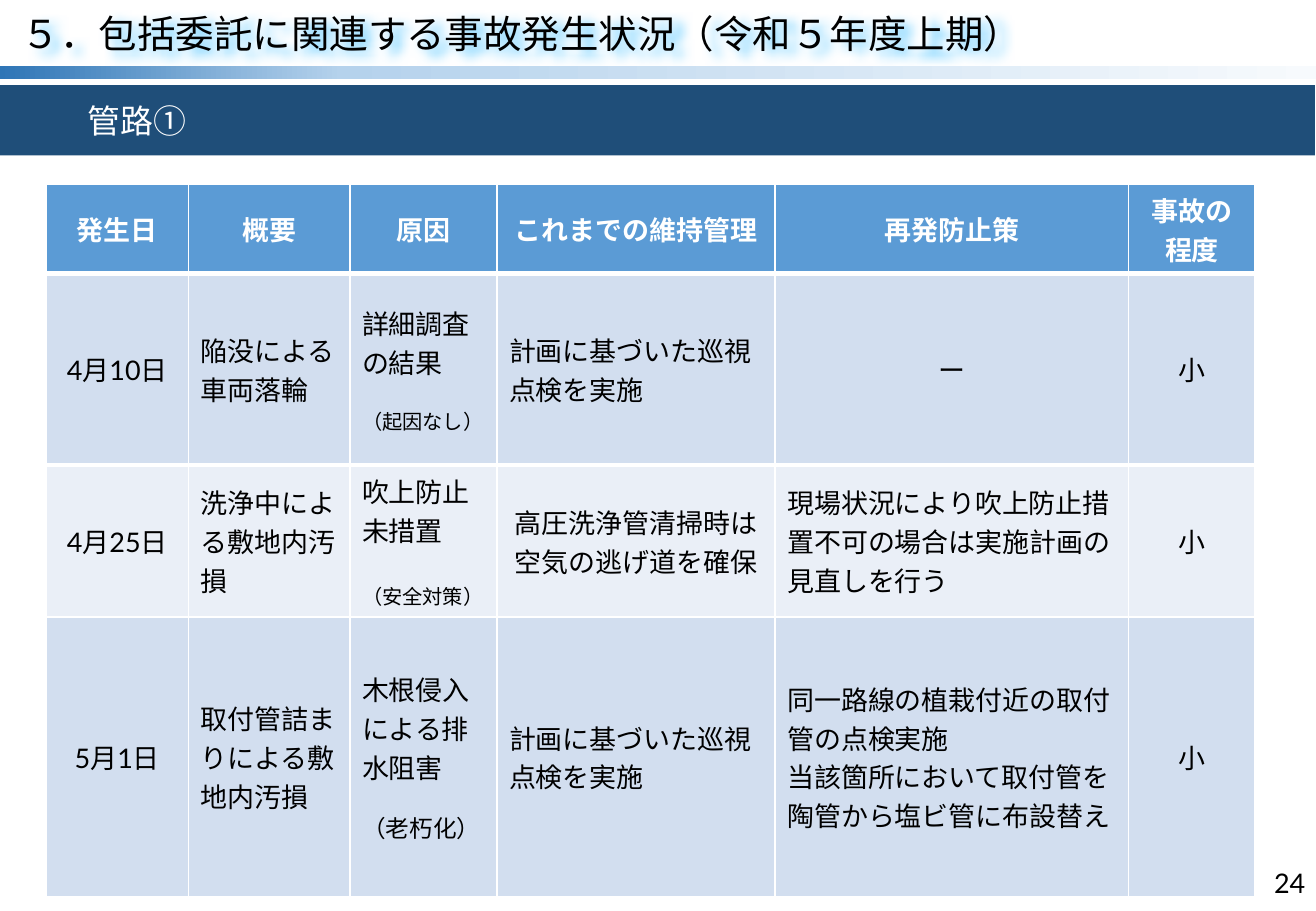
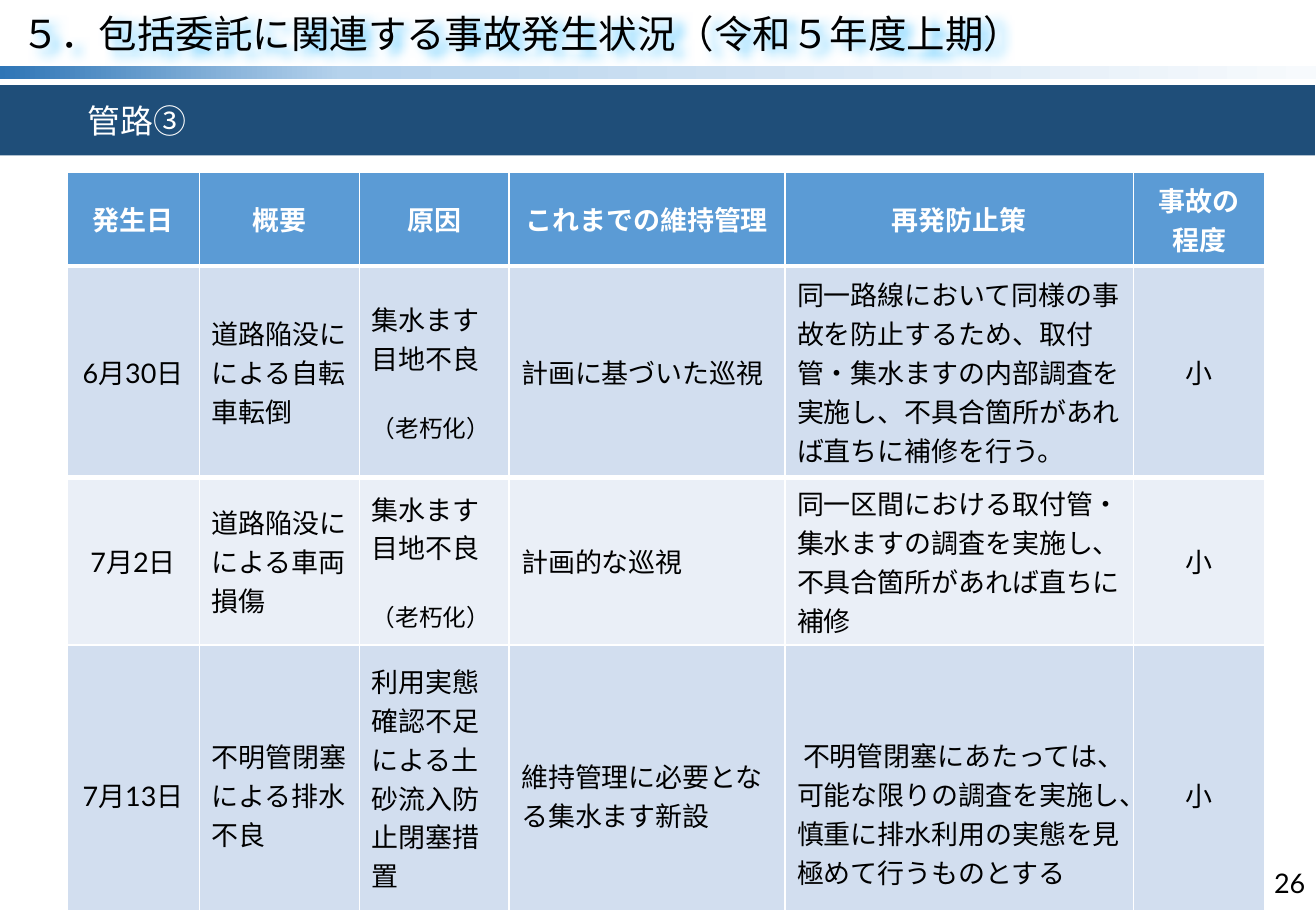
from copy import deepcopy
from dataclasses import dataclass

from lxml.etree import SubElement
from pptx import Presentation
from pptx.dml.color import RGBColor
from pptx.enum.shapes import MSO_SHAPE as Shape
from pptx.enum.text import MSO_ANCHOR as Anchor, MSO_AUTO_SIZE as Fit, PP_ALIGN as Align
from pptx.oxml.ns import qn
from pptx.util import Inches, Pt

WHITE = RGBColor(0xFF, 0xFF, 0xFF)
BLACK = RGBColor(0, 0, 0)
NAVY = RGBColor(0x1F, 0x4E, 0x79)
HEAD = RGBColor(0x5B, 0x9B, 0xD5)
DARK = RGBColor(0xD2, 0xDE, 0xEF)
PALE = RGBColor(0xEA, 0xEF, 0xF7)
GLOW = RGBColor(0x66, 0xCC, 0xFF)
FADE = [(0, RGBColor(0x2E, 0x75, 0xB6)), (0.26, RGBColor(0xB5, 0xD2, 0xEC)),
        (1, RGBColor(0xF7, 0xFA, 0xFD))]

LATIN = "Lato"
KANJI = "Noto Sans CJK JP"
TITLE = "５．包括委託に関連する事故発生状況（令和５年度上期）"
HEADS = ("発生日", "概要", "原因", "これまでの維持管理", "再発防止策", "事故の程度")


@dataclass
class Text:
    text: str
    size: float = 16
    gap: float = 0
    mid: bool = False


@dataclass
class Cell:
    paras: list[Text]
    top: float = 0.05


@dataclass
class Row:
    high: float
    date: str
    event: str
    cause: Cell
    care: Cell
    plan: Cell
    top: float = 0.05


@dataclass
class Page:
    number: str
    topic: str
    left: float
    top: float
    cols: list[float]
    head: float
    rows: list[Row]


def plain(*lines: str, mid: bool = False, top: float = 0.05) -> Cell:
    return Cell([Text(line, mid=mid) for line in lines], top)


def noted(text: str, note: str, size: float, gap: float) -> Cell:
    return Cell([Text(text), Text(note, size, gap)])


PAGES = [
    Page("24", "管路①", 0.38, 1.52, [1.17, 1.33, 1.21, 2.29, 2.91, 1.04], 0.73, [
        Row(1.58, "4月10日", "陥没による車両落輪",
            noted("詳細調査の結果", "（起因なし）", 12, 14.4),
            plain("計画に基づいた巡視点検を実施"), plain("ー", mid=True)),
        Row(1.25, "4月25日", "洗浄中による敷地内汚損",
            noted("吹上防止未措置", "（安全対策）", 12, 19.2),
            plain("高圧洗浄管清掃時は空気の逃げ道を確保", mid=True),
            plain("現場状況により吹上防止措置不可の場合は実施計画の見直しを行う")),
        Row(2.3, "5月1日", "取付管詰まりによる敷地内汚損",
            noted("木根侵入による排水阻害", "（老朽化）", 14, 14.4),
            plain("計画に基づいた巡視点検を実施"),
            plain("同一路線の植栽付近の取付管の点検実施",
                  "当該箇所において取付管を陶管から塩ビ管に布設替え")),
    ]),
    Page("26", "管路③", 0.55, 1.42, [1.09, 1.32, 1.23, 2.27, 2.87, 1.08], 0.77, [
        Row(1.74, "6月30日", "道路陥没にによる自転車転倒",
            noted("集水ます目地不良", "（老朽化）", 14, 19.2),
            plain("計画に基づいた巡視"),
            plain("同一路線において同様の事故を防止するため、取付管・集水ますの内部調査を"
                  "実施し、不具合箇所があれば直ちに補修を行う。")),
        Row(1.38, "7月2日", "道路陥没にによる車両損傷",
            noted("集水ます目地不良", "（老朽化）", 14, 19.2),
            plain("計画的な巡視"),
            plain("同一区間における取付管・集水ますの調査を実施し、不具合箇所があれば"
                  "直ちに補修")),
        Row(2.19, "7月13日", "不明管閉塞による排水不良",
            plain("利用実態確認不足による土砂流入防止閉塞措置"),
            plain("維持管理に必要となる集水ます新設", top=0.33),
            plain(" 不明管閉塞にあたっては、可能な限りの調査を実施し、慎重に排水利用の"
                  "実態を見極めて行うものとする", top=0.63), top=0.33),
    ]),
]


def style(para, size: float, color: RGBColor, name: str = LATIN,
          align=Align.LEFT, bold: bool = False) -> None:
    para.alignment = align
    font = para.font
    font.size, font.name, font.bold = Pt(size), name, bold
    font.color.rgb = color
    if name == KANJI:
        props = para._p.pPr.find(qn("a:defRPr"))
        SubElement(props, qn("a:ea")).set("typeface", KANJI)


def inset(frame, left: float, top: float, right: float, low: float) -> None:
    frame.margin_left, frame.margin_top = Inches(left), Inches(top)
    frame.margin_right, frame.margin_bottom = Inches(right), Inches(low)


def place(shape, left: float, top: float, wide: float, high: float) -> None:
    shape.left, shape.top = Inches(left), Inches(top)
    shape.width, shape.height = Inches(wide), Inches(high)


def band(slide, top: float, wide: float, high: float):
    shape = slide.shapes.add_shape(Shape.RECTANGLE, 0, Inches(top), Inches(wide), Inches(high))
    shape.shadow.inherit = False
    shape.line.fill.background()
    return shape


def add_title(slide) -> None:
    title = slide.shapes.title
    place(title, 0.15, 0.13, 10.53, 0.37)
    frame = title.text_frame
    frame.text = TITLE
    frame.auto_size, frame.word_wrap = Fit.NONE, True
    frame.vertical_anchor = Anchor.TOP
    inset(frame, 0.03, 0.03, 0.03, 0.03)
    para = frame.paragraphs[0]
    style(para, 22.8, BLACK, KANJI)
    para.line_spacing = Pt(21.9)
    # Soft blue shadow behind the letters
    effect = SubElement(title.element.spPr, qn("a:effectLst"))
    shadow = SubElement(effect, qn("a:outerShdw"), blurRad=str(Pt(6)),
                        dist=str(Pt(5)), dir="1800000", algn="tl", rotWithShape="0")
    SubElement(shadow, qn("a:srgbClr"), val=str(GLOW))


def add_frame(slide, page: Page) -> None:
    add_title(slide)
    # Fading rule under the title
    rule = band(slide, 0.54, 10.83, 0.11)
    rule.fill.gradient()
    rule.fill.gradient_angle = 0
    stops = rule.element.spPr.find(".//" + qn("a:gsLst"))
    stops.append(deepcopy(stops[0]))
    for stop, (spot, color) in zip(rule.fill.gradient_stops, FADE):
        stop.position, stop.color.rgb = spot, color
    # Topic band
    topic = band(slide, 0.7, 10.82, 0.58)
    topic.fill.solid()
    topic.fill.fore_color.rgb = NAVY
    frame = topic.text_frame
    frame.text = page.topic
    frame.vertical_anchor = Anchor.MIDDLE
    inset(frame, 0.72, 0.1, 0.09, 0.1)
    style(frame.paragraphs[0], 19.5, WHITE, KANJI)
    # Page number
    box = slide.shapes.add_textbox(Inches(8.4), Inches(7.07), Inches(2.44), Inches(0.4))
    frame = box.text_frame
    frame.text = page.number
    frame.word_wrap, frame.vertical_anchor = True, Anchor.MIDDLE
    style(frame.paragraphs[0], 16, BLACK, align=Align.RIGHT)


def add_edge(cell, side: str, width: float) -> None:
    props = cell._tc.get_or_add_tcPr()
    edge = SubElement(props, qn(side), w=str(Pt(width)))
    SubElement(SubElement(edge, qn("a:solidFill")), qn("a:srgbClr"), val=str(WHITE))
    props.insert(0, edge)


def fill_cell(cell, data: Cell, back: RGBColor, color: RGBColor, bold: bool) -> None:
    cell.fill.solid()
    cell.fill.fore_color.rgb = back
    cell.vertical_anchor = Anchor.MIDDLE
    cell.margin_top = Inches(data.top)
    frame = cell.text_frame
    for i, item in enumerate(data.paras):
        para = frame.add_paragraph() if i else frame.paragraphs[0]
        para.text = item.text
        align = Align.CENTER if item.mid else Align.LEFT
        style(para, item.size, color, align=align, bold=bold)
        if item.gap:
            para.space_before = Pt(item.gap)


def add_grid(slide, page: Page) -> None:
    highs = [page.head] + [row.high for row in page.rows]
    table = slide.shapes.add_table(
        len(highs), len(HEADS), Inches(page.left), Inches(page.top),
        Inches(sum(page.cols)), Inches(sum(highs))).table
    for col, wide in zip(table.columns, page.cols):
        col.width = Inches(wide)
    for line, high in zip(table.rows, highs):
        line.height = Inches(high)
    # Header row with a thick lower edge
    for c, head in enumerate(HEADS):
        fill_cell(table.cell(0, c), plain(head, mid=True), HEAD, WHITE, True)
        add_edge(table.cell(0, c), "a:lnB", 3)
        add_edge(table.cell(1, c), "a:lnT", 3)
    # Accident rows
    for r, row in enumerate(page.rows, 1):
        cells = (plain(row.date, mid=True, top=row.top), plain(row.event, top=row.top),
                 row.cause, row.care, row.plan, plain("小", mid=True, top=row.top))
        for c, data in enumerate(cells):
            fill_cell(table.cell(r, c), data, DARK if r % 2 else PALE, BLACK, False)


def main() -> None:
    deck = Presentation()
    deck.slide_width, deck.slide_height = Inches(10.83), Inches(7.5)
    for page in PAGES:
        slide = deck.slides.add_slide(deck.slide_layouts[5])
        add_frame(slide, page)
        add_grid(slide, page)
    deck.save("out.pptx")


if __name__ == "__main__":
    main()
